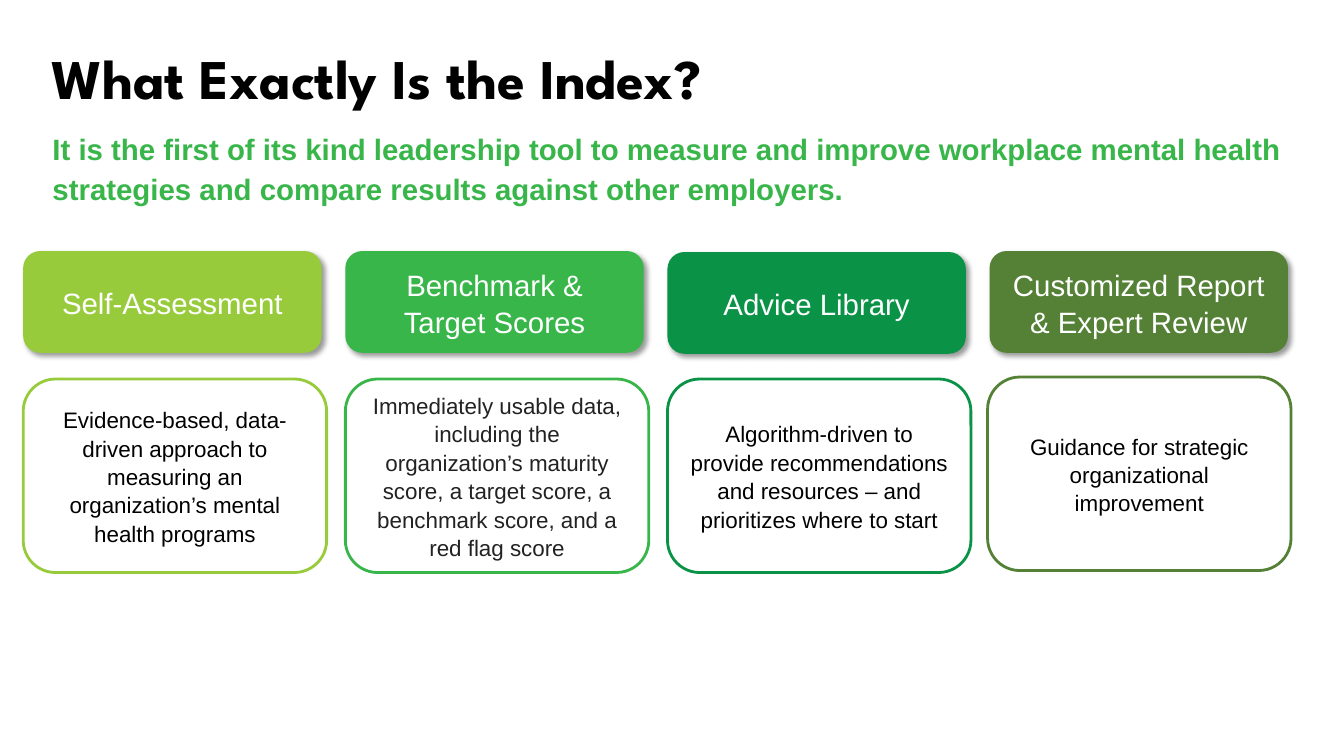
from dataclasses import dataclass

from lxml.etree import SubElement
from pptx import Presentation
from pptx.dml.color import RGBColor
from pptx.enum.shapes import MSO_SHAPE
from pptx.enum.text import MSO_ANCHOR, MSO_AUTO_SIZE, PP_ALIGN
from pptx.oxml.ns import qn
from pptx.util import Inches, Pt


@dataclass(frozen=True)
class Theme:
    title_font: str = "League Spartan"
    body_font: str = "Arial"
    title_size: float = 40
    lead_size: float = 21
    header_size: float = 21
    detail_size: float = 16
    black: str = "000000"
    charcoal: str = "222222"
    white: str = "FFFFFF"
    lime: str = "97CB3B"
    green: str = "39B64A"
    emerald: str = "0A9347"
    olive: str = "548135"


THEME = Theme()

# Grid, in inches
SLIDE_SIZE = (13.33, 7.5)
FIRST_COLUMN = 0.23
COLUMN_STEP = 3.195
HEADER_TOP, HEADER_SIZE = 2.49, (2.96, 1.01)
DETAIL_TOP, DETAIL_SIZE = 3.76, (3.01, 1.92)

# Header, detail, colour, detail text colour, (x, y) nudge of header and of detail
PILLARS = [
    ("Self-Assessment",
     "Evidence-based, data-driven approach to measuring an organization’s "
     "mental health programs",
     THEME.lime, THEME.black, (0, 0), (0, 0)),
    ("Benchmark & Target Scores",
     "Immediately usable data, including the organization’s maturity score, "
     "a target score, a benchmark score, and a red flag score",
     THEME.green, THEME.charcoal, (0, 0), (0, 0)),
    ("Advice Library",
     "Algorithm-driven to provide recommendations and resources – and "
     "prioritizes where to start",
     THEME.emerald, THEME.black, (0, 0.01), (0, 0)),
    ("Customized Report & Expert Review",
     "Guidance for strategic organizational improvement",
     THEME.olive, THEME.black, (0, 0), (-0.02, -0.02)),
]


def write(shape, text, font, size, color, bold=False, align=PP_ALIGN.LEFT,
          anchor=MSO_ANCHOR.MIDDLE, margins=(0.13, 0.07), spacing=1.06):
    frame = shape.text_frame
    frame.word_wrap = True
    frame.auto_size = MSO_AUTO_SIZE.NONE
    frame.vertical_anchor = anchor
    frame.margin_left = frame.margin_right = Inches(margins[0])
    frame.margin_top = frame.margin_bottom = Inches(margins[1])
    para = frame.paragraphs[0]
    para.alignment = align
    para.line_spacing = spacing
    para.space_before = Pt(0)
    span = para.add_run()
    span.text = text
    span.font.name = font
    span.font.size = Pt(size)
    span.font.bold = bold
    span.font.color.rgb = RGBColor.from_string(color)
    return para


def place(shape, left, top, width, height):
    shape.left, shape.top = Inches(left), Inches(top)
    shape.width, shape.height = Inches(width), Inches(height)


def remove_bullet(para):
    properties = para._p.get_or_add_pPr()
    properties.set("marL", "0")
    properties.set("indent", "0")
    SubElement(properties, qn("a:buNone"))


def add_soft_shadow(shape):
    effects = SubElement(shape._element.spPr, qn("a:effectLst"))
    shadow = SubElement(effects, qn("a:outerShdw"), blurRad=str(Pt(4)),
                        dist=str(Pt(3)), dir=str(45 * 60000), algn="tl",
                        rotWithShape="0")
    color = SubElement(shadow, qn("a:srgbClr"), val=THEME.black)
    SubElement(color, qn("a:alpha"), val="40000")


def add_rounded_box(page, column, top, size, nudge):
    left = FIRST_COLUMN + column * COLUMN_STEP + nudge[0]
    box = page.shapes.add_shape(
        MSO_SHAPE.ROUNDED_RECTANGLE, Inches(left), Inches(top + nudge[1]),
        Inches(size[0]), Inches(size[1]))
    box.adjustments[0] = 0.167
    return box


def add_header(page, column, text, color, nudge):
    box = add_rounded_box(page, column, HEADER_TOP, HEADER_SIZE, nudge)
    box.fill.solid()
    box.fill.fore_color.rgb = RGBColor.from_string(color)
    box.line.fill.background()
    add_soft_shadow(box)
    write(box, text, THEME.body_font, THEME.header_size, THEME.white,
          align=PP_ALIGN.CENTER)


def add_detail(page, column, text, color, text_color, nudge):
    box = add_rounded_box(page, column, DETAIL_TOP, DETAIL_SIZE, nudge)
    box.shadow.inherit = False
    box.fill.background()
    box.line.color.rgb = RGBColor.from_string(color)
    box.line.width = Pt(2)
    write(box, text, THEME.body_font, THEME.detail_size, text_color,
          align=PP_ALIGN.CENTER)


def fill_heading(page):
    title, lead = page.shapes.title, page.placeholders[1]
    place(title, 0.38, 0.08, 13.09, 1.45)
    write(title, "What Exactly Is the Index?", THEME.title_font,
          THEME.title_size, THEME.black, bold=True, spacing=0.9)
    place(lead, 0.42, 1.21, 12.54, 0.84)
    para = write(
        lead,
        "It is the first of its kind leadership tool to measure and improve "
        "workplace mental health strategies and compare results against "
        "other employers.",
        THEME.body_font, THEME.lead_size, THEME.green, bold=True,
        anchor=MSO_ANCHOR.TOP, margins=(0.1, 0.05), spacing=1.12)
    remove_bullet(para)


def main():
    deck = Presentation()
    deck.slide_width, deck.slide_height = map(Inches, SLIDE_SIZE)
    page = deck.slides.add_slide(deck.slide_layouts.get_by_name("Title and Content"))
    fill_heading(page)
    for column, pillar in enumerate(PILLARS):
        header, detail, color, text_color, header_nudge, detail_nudge = pillar
        add_header(page, column, header, color, header_nudge)
        add_detail(page, column, detail, color, text_color, detail_nudge)
    deck.save("out.pptx")


if __name__ == "__main__":
    main()
